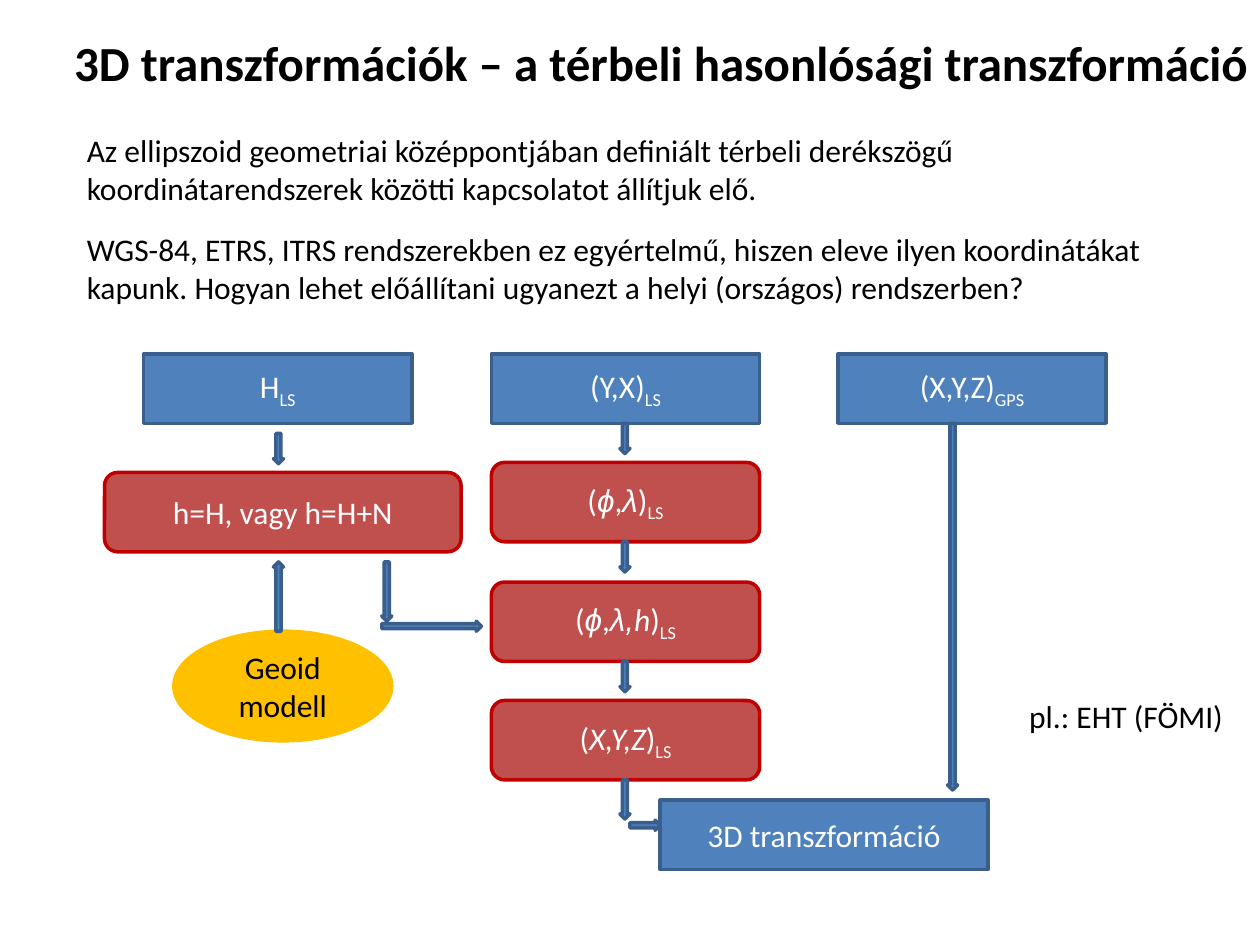
import pptx
import pptx.util
import pptx.dml.color
import pptx.enum.shapes
import pptx.enum.text

Inches = pptx.util.Inches
Pt = pptx.util.Pt
Kind = pptx.enum.shapes.MSO_SHAPE
Align = pptx.enum.text.PP_ALIGN
Auto = pptx.enum.text.MSO_AUTO_SIZE

hues = {
    "black": "000000",
    "white": "FFFFFF",
    "blue": "4F81BD",
    "navy": "3A5F8C",
    "red": "C0504D",
    "dark": "C00000",
    "gold": "FFC000",
}


def hue(name):
    return pptx.dml.color.RGBColor.from_string(hues[name])


def write(frame, text, size=18, color="black", bold=False, align=Align.LEFT):
    parts = [(text, "")] if isinstance(text, str) else text
    para = frame.paragraphs[0]
    para.alignment = align
    for words, style in parts:
        run = para.add_run()
        run.text = words
        run.font.name = "Arial" if style == "greek" else "Calibri"
        run.font.size = Pt(size)
        run.font.bold = bold
        run.font.italic = style in ("greek", "italic")
        run.font.color.rgb = hue(color)
        if style == "sub":
            run._r.get_or_add_rPr().set("baseline", "-25000")


def shape(kind, place, fill, line):
    item = slide.shapes.add_shape(kind, *[Inches(n) for n in place])
    item.shadow.inherit = False
    item.fill.solid()
    item.fill.fore_color.rgb = hue(fill)
    item.line.color.rgb = hue(line)
    item.line.width = Pt(2)
    return item


deck = pptx.Presentation()
deck.slide_width = Inches(10)
deck.slide_height = Inches(7.5)
slide = deck.slides.add_slide(deck.slide_layouts[6])

title = "3D transzformációk – a térbeli hasonlósági transzformáció"
intro = (
    "Az ellipszoid geometriai középpontjában definiált térbeli derékszögű "
    "koordinátarendszerek közötti kapcsolatot állítjuk elő."
)
query = (
    "WGS-84, ETRS, ITRS rendszerekben ez egyértelmű, hiszen eleve ilyen koordinátákat "
    "kapunk. Hogyan lehet előállítani ugyanezt a helyi (országos) rendszerben?"
)
notes = [
    (title, (0.28, 0.21, 9.72, 0.57), True, {"size": 28, "bold": True, "align": Align.RIGHT}),
    (intro, (0.59, 0.99, 8.82, 0.71), True, {}),
    (query, (0.59, 1.78, 8.82, 0.71), True, {}),
    ("pl.: EHT (FÖMI)", (8.07, 5.48, 1.75, 0.4), False, {}),
]
for text, place, wrap, form in notes:
    frame = slide.shapes.add_textbox(*[Inches(n) for n in place]).text_frame
    frame.word_wrap = wrap
    frame.auto_size = Auto.SHAPE_TO_FIT_TEXT
    write(frame, text, **form)

blue = (Kind.RECTANGLE, "blue", "navy", "white")
red = (Kind.ROUNDED_RECTANGLE, "red", "dark", "white")
gold = (Kind.OVAL, "gold", "gold", "black")
local = ("LS", "sub")
angles = [("(", ""), ("ϕ", "greek"), (",", ""), ("λ", "greek"), (")", ""), local]
height = [("(", ""), ("ϕ", "greek"), (",", ""), ("λ,", "greek"), ("h", "italic"), (")", ""), local]
space = [("(", ""), ("X,Y,Z", "italic"), (")", ""), local]

boxes = [
    ([("H", ""), local], blue, (1.14, 2.81, 2.13, 0.55)),
    ([("(Y,X)", ""), local], blue, (3.9, 2.81, 2.13, 0.55)),
    ([("(X,Y,Z)", ""), ("GPS", "sub")], blue, (6.65, 2.81, 2.13, 0.55)),
    ("h=H, vagy h=H+N", red, (0.83, 3.75, 2.83, 0.63)),
    (angles, red, (3.9, 3.67, 2.13, 0.63)),
    (height, red, (3.9, 4.62, 2.13, 0.63)),
    (space, red, (3.9, 5.56, 2.13, 0.63)),
    ("Geoid modell", gold, (1.38, 5.01, 1.73, 0.87)),
    ("3D transzformáció", blue, (5.24, 6.35, 2.6, 0.55)),
]
for text, (kind, fill, line, color), place in boxes:
    frame = shape(kind, place, fill, line).text_frame
    frame.word_wrap = True
    frame.vertical_anchor = pptx.enum.text.MSO_ANCHOR.MIDDLE
    write(frame, text, color=color, align=Align.CENTER)

thick = 0.08
falls = [
    (2.17, 3.44, 0.24),
    (4.92, 3.36, 0.24),
    (4.92, 4.3, 0.24),
    (4.92, 5.25, 0.24),
    (7.52, 3.36, 2.91),
    (4.92, 6.19, 0.31),
    (3.03, 4.46, 0.47),
]
for left, top, span in falls:
    shape(Kind.DOWN_ARROW, (left, top, thick, span), "blue", "navy")

rise = shape(Kind.DOWN_ARROW, (2.17, 4.46, thick, 0.55), "blue", "navy")
rise.rotation = 180

for left, top, span in [(5, 6.51, 0.24), (3.03, 4.93, 0.79)]:
    shape(Kind.RIGHT_ARROW, (left, top, span, thick), "blue", "navy")

deck.save("out.pptx")
